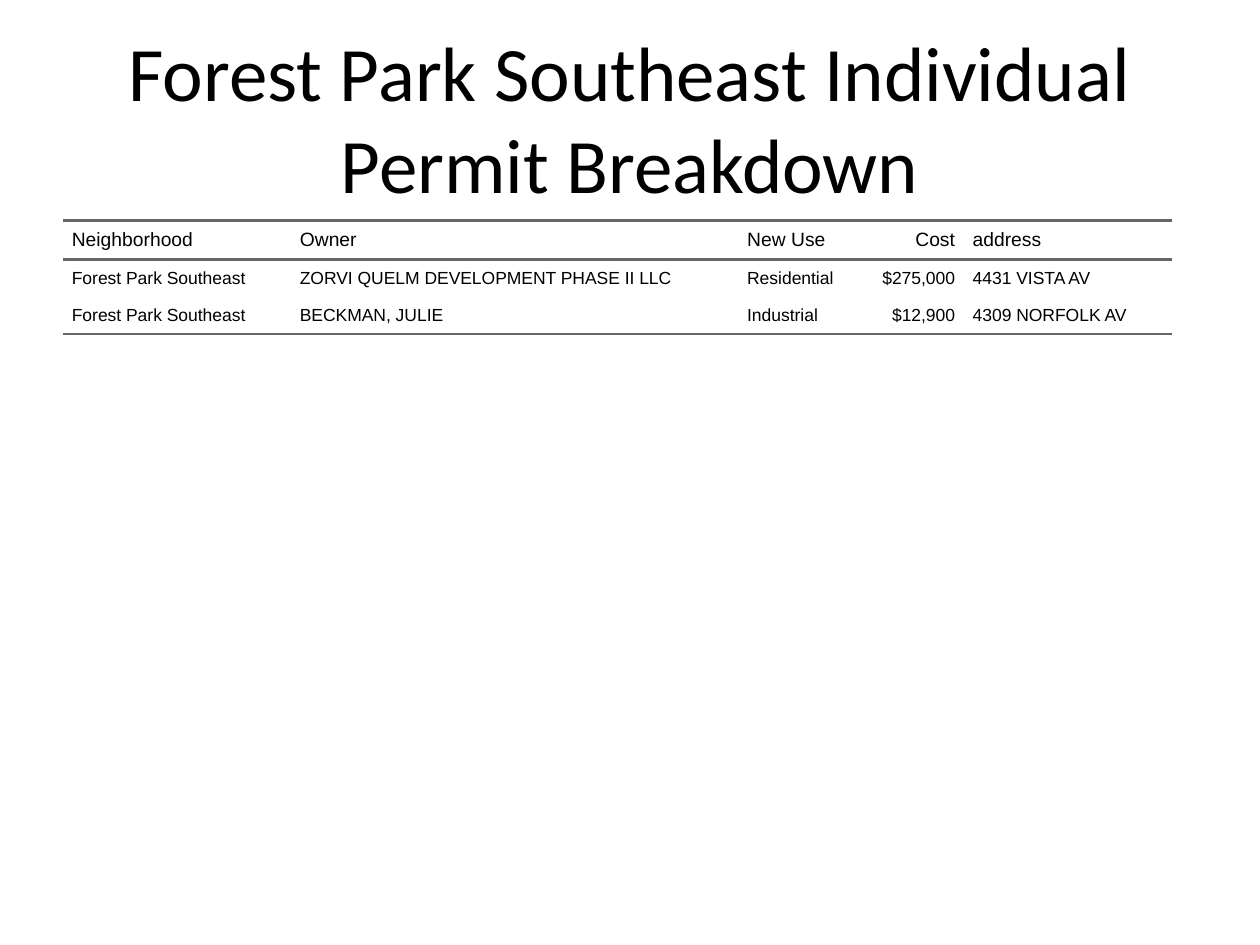
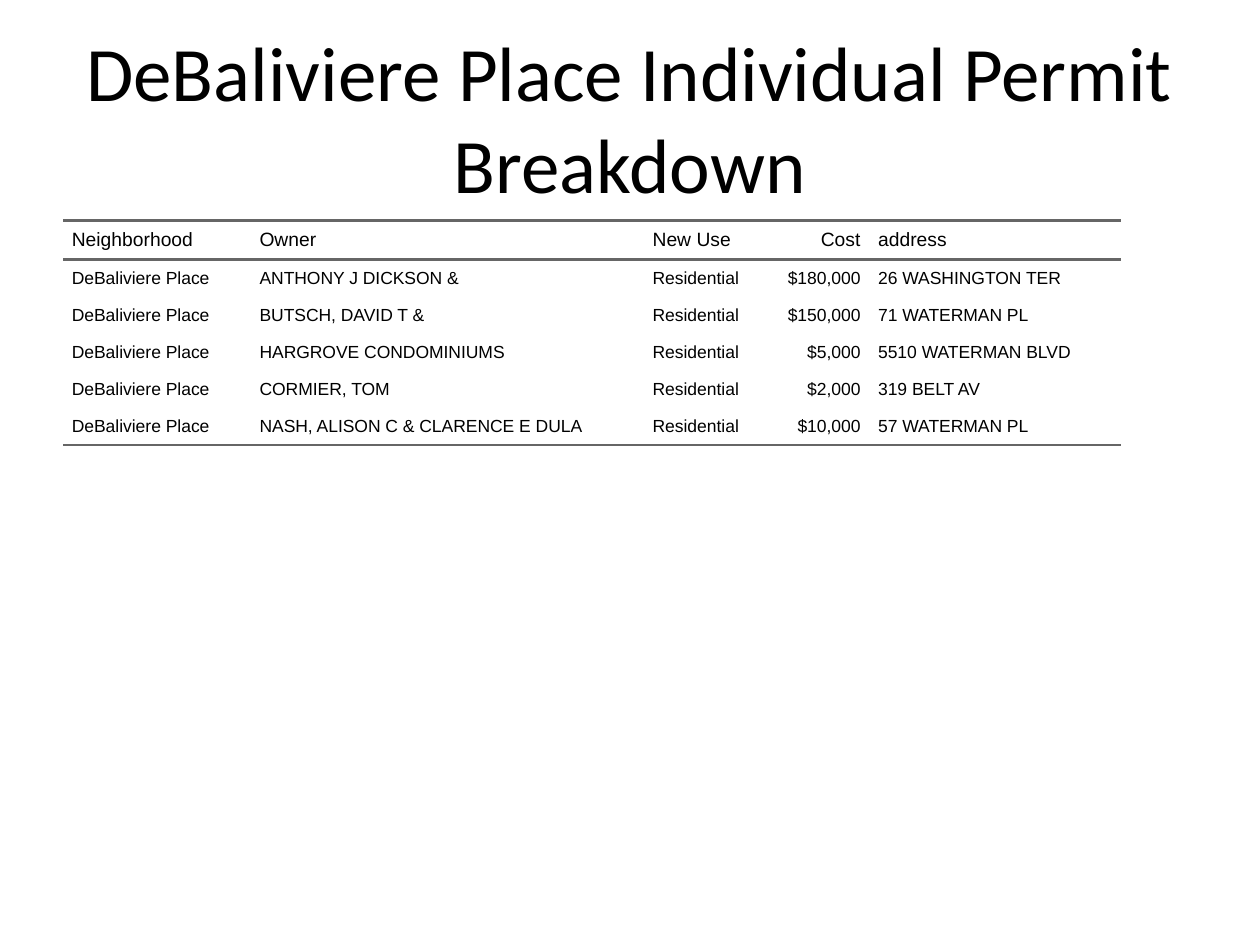
from pptx import Presentation
from pptx.dml.color import RGBColor
from pptx.enum.text import MSO_ANCHOR, MSO_AUTO_SIZE, PP_ALIGN
from pptx.oxml.ns import qn
from pptx.util import Pt
from lxml import etree

PX = 9144  # EMU per px, 100 px to the inch
BLACK = RGBColor(0x00, 0x00, 0x00)
RULE_GRAY = RGBColor(0x66, 0x66, 0x66)
TITLE_FONT, TABLE_FONT = "Calibri", "Arial"
LEFT, CENTER, RIGHT = PP_ALIGN.LEFT, PP_ALIGN.CENTER, PP_ALIGN.RIGHT
MIDDLE = MSO_ANCHOR.MIDDLE
NO_AUTOFIT = MSO_AUTO_SIZE.NONE
TITLE_ONLY = 5

TITLE_BOX = (50, 30, 900, 125)
TABLE_ORIGIN = (50, 175)
ROW_HEIGHT = 25
CELL_PAD = 7
HEADERS = ("Neighborhood", "Owner", "New Use", "Cost", "address")
COST_COLUMN = HEADERS.index("Cost")

# Each permit: owner, new use, cost, address
NEIGHBORHOODS = [
    ("Forest Park Southeast", (181, 355, 104, 75, 165), [
        ("ZORVI QUELM DEVELOPMENT PHASE II LLC", "Residential", "$275,000", "4431 VISTA AV"),
        ("BECKMAN, JULIE", "Industrial", "$12,900", "4309 NORFOLK AV"),
    ]),
    ("DeBaliviere Place", (149, 312, 104, 75, 200), [
        ("ANTHONY J DICKSON &", "Residential", "$180,000", "26 WASHINGTON TER"),
        ("BUTSCH, DAVID T &", "Residential", "$150,000", "71 WATERMAN PL"),
        ("HARGROVE CONDOMINIUMS", "Residential", "$5,000", "5510 WATERMAN BLVD"),
        ("CORMIER, TOM", "Residential", "$2,000", "319 BELT AV"),
        ("NASH, ALISON C & CLARENCE E DULA", "Residential", "$10,000", "57 WATERMAN PL"),
    ]),
]


def style_paragraph(p, font, size, align):
    p.alignment = align
    p.font.name = font
    p.font.size = Pt(size)
    p.font.color.rgb = BLACK


def add_title(slide, text, box):
    sp = slide.shapes.title
    sp.left, sp.top, sp.width, sp.height = (v * PX for v in box)
    tf = sp.text_frame
    tf.text = text
    tf.word_wrap = True
    tf.auto_size = NO_AUTOFIT
    tf.vertical_anchor = MIDDLE
    style_paragraph(tf.paragraphs[0], TITLE_FONT, 44, CENTER)


def set_borders(cell, ruled_sides):
    """Draw a gray rule on the given sides and clear the others."""
    tc_pr = cell._tc.get_or_add_tcPr()
    for side in "LRTB":
        ln = etree.SubElement(tc_pr, qn(f"a:ln{side}"))
        if side in ruled_sides:
            ln.set("w", str(Pt(1.5)))
            fill = etree.SubElement(ln, qn("a:solidFill"))
            etree.SubElement(fill, qn("a:srgbClr"), val=str(RULE_GRAY))
        else:
            etree.SubElement(ln, qn("a:noFill"))


def fill_cell(cell, text, size, align, ruled_sides):
    cell.text = text
    cell.vertical_anchor = MIDDLE
    cell.margin_left = cell.margin_right = 0
    cell.margin_top = cell.margin_bottom = CELL_PAD * PX
    set_borders(cell, ruled_sides)
    cell.fill.background()

    p = cell.text_frame.paragraphs[0]
    style_paragraph(p, TABLE_FONT, size, align)
    p.space_before = p.space_after = Pt(5)
    p_pr = p._p.get_or_add_pPr()
    for margin in ("marL", "marR"):
        p_pr.set(margin, str(CELL_PAD * PX))
    p_pr.set("indent", "0")


def add_permit_table(slide, rows, widths, origin):
    left, top = origin
    frame = slide.shapes.add_table(
        len(rows), len(widths), left * PX, top * PX,
        sum(widths) * PX, len(rows) * ROW_HEIGHT * PX)
    table = frame.table
    table.first_row = table.horz_banding = False
    for column, width in zip(table.columns, widths):
        column.width = width * PX

    # Rules above and below the header, and under the last row
    for i, row in enumerate(rows):
        ruled_sides = ("T" if i <= 1 else "") + ("B" if i in (0, len(rows) - 1) else "")
        for j, text in enumerate(row):
            fill_cell(table.cell(i, j), text, 11 if i == 0 else 10,
                      RIGHT if j == COST_COLUMN else LEFT, ruled_sides)


def add_breakdown_slide(prs, neighborhood, widths, permits):
    slide = prs.slides.add_slide(prs.slide_layouts[TITLE_ONLY])
    add_title(slide, f"{neighborhood} Individual Permit Breakdown", TITLE_BOX)
    rows = [HEADERS] + [(neighborhood, *permit) for permit in permits]
    add_permit_table(slide, rows, widths, TABLE_ORIGIN)


def main():
    prs = Presentation()
    prs.slide_width, prs.slide_height = 1000 * PX, 750 * PX
    for neighborhood, widths, permits in NEIGHBORHOODS:
        add_breakdown_slide(prs, neighborhood, widths, permits)
    prs.save("out.pptx")


if __name__ == "__main__":
    main()
